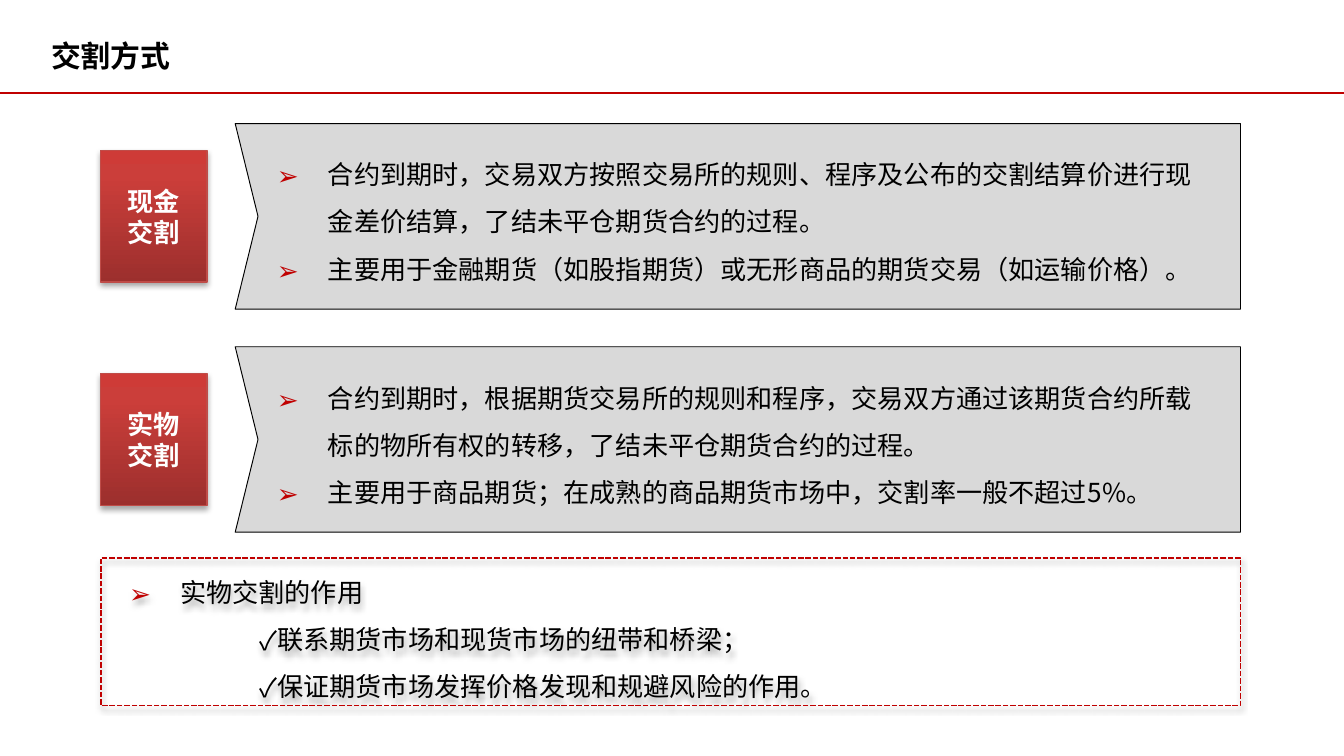
from copy import deepcopy
from dataclasses import dataclass

from lxml import etree
from pptx import Presentation
from pptx import util as u
from pptx.dml.color import RGBColor
from pptx.enum import dml, shapes, text
from pptx.oxml.ns import qn


@dataclass(frozen=True)
class Theme:
    font: str = "Noto Sans CJK SC"
    title_size: int = 16
    text_size: int = 14
    ink: str = "000000"
    paper: str = "FFFFFF"
    accent: str = "C00000"
    panel: str = "D9D9D9"
    label_line: str = "BF4C48"
    label_stops: tuple = ((0, "9C2F2D"), (0.8, "CB3E3A"), (1, "CE3B37"))


THEME = Theme()
WIDTH = 10
HEIGHT = WIDTH * 9 / 16
LEFT, RIGHT = 0.75, 9.23
RULE_TOP = 0.69
PANEL_LEFT, PANEL_TOP, PANEL_HEIGHT, PANEL_PITCH = 1.75, 0.92, 1.38, 1.66
NOTCH = 0.17
LABEL_WIDTH, LABEL_HEIGHT = 0.79, 0.98

# Bullet styles: character, colour, left margin, first-line indent
PANEL_ITEM = ("➢", THEME.accent, 0.38, -0.38)
ROLE_HEADING = ("➢", THEME.accent, 0.59, -0.38)
ROLE_ITEM = ("✓", THEME.ink, 0.79, 0.39)

DELIVERY_METHODS = [
    (("现金", "交割"), [
        "合约到期时，交易双方按照交易所的规则、程序及公布的交割结算价进行现金差价结算，了结未平仓期货合约的过程。",
        "主要用于金融期货（如股指期货）或无形商品的期货交易（如运输价格）。",
    ]),
    (("实物", "交割"), [
        "合约到期时，根据期货交易所的规则和程序，交易双方通过该期货合约所载标的物所有权的转移，了结未平仓期货合约的过程。",
        "主要用于商品期货；在成熟的商品期货市场中，交割率一般不超过5%。",
    ]),
]
ROLES = [
    ("实物交割的作用", ROLE_HEADING),
    ("联系期货市场和现货市场的纽带和桥梁；", ROLE_ITEM),
    ("保证期货市场发挥价格发现和规避风险的作用。", ROLE_ITEM),
]


def rgb(color):
    return RGBColor.from_string(color)


def add_node(parent, tag, **attributes):
    node = etree.SubElement(parent, qn(tag))
    for name, value in attributes.items():
        node.set(name, str(value))
    return node


def set_font(paragraph, size, color, bold=False):
    font = paragraph.font
    font.name, font.size, font.bold = THEME.font, u.Pt(size), bold
    font.color.rgb = rgb(color)
    defaults = paragraph._p.pPr.find(qn("a:defRPr"))
    east_asian = etree.Element(qn("a:ea"), typeface=THEME.font)
    defaults.find(qn("a:latin")).addnext(east_asian)


def set_bullet(paragraph, style):
    character, color, margin, indent = style
    properties = paragraph._p.get_or_add_pPr()
    properties.set("marL", str(u.Inches(margin)))
    properties.set("indent", str(u.Inches(indent)))
    add_node(add_node(properties, "a:buClr"), "a:srgbClr", val=color)
    add_node(properties, "a:buFont", typeface=THEME.font)
    add_node(properties, "a:buChar", char=character)


def paragraphs_for(frame, lines):
    """Yield one paragraph per line, starting with the frame's own."""
    for index, line in enumerate(lines):
        paragraph = frame.add_paragraph() if index else frame.paragraphs[0]
        paragraph.text = line
        yield paragraph


def fill_list(shape, items, insets):
    """Write (line, bullet style) items; insets run left, top, right, bottom."""
    frame = shape.text_frame
    frame.word_wrap = True
    frame.vertical_anchor = text.MSO_ANCHOR.MIDDLE
    (frame.margin_left, frame.margin_top,
     frame.margin_right, frame.margin_bottom) = map(u.Inches, insets)
    lines, styles = zip(*items)
    for paragraph, style in zip(paragraphs_for(frame, lines), styles):
        set_bullet(paragraph, style)
        paragraph.alignment = text.PP_ALIGN.LEFT
        paragraph.line_spacing = 1.5
        set_font(paragraph, THEME.text_size, THEME.ink)


def set_line(shape, color, width):
    shape.line.color.rgb = rgb(color)
    shape.line.width = u.Pt(width)


def set_soft_shadow(shape):
    shape.shadow.inherit = False
    effects = shape._element.spPr.find(qn("a:effectLst"))
    shadow = add_node(effects, "a:outerShdw", blurRad=u.Pt(3.1),
                      dist=u.Pt(1.8), dir=90 * 60000, rotWithShape=0)
    color = add_node(shadow, "a:srgbClr", val=THEME.ink)
    add_node(color, "a:alpha", val=35000)


def add_rectangle(slide, left, top, width, height):
    shape = slide.shapes.add_shape(
        shapes.MSO_SHAPE.RECTANGLE, *map(u.Inches, (left, top, width, height)))
    set_soft_shadow(shape)
    return shape


def add_title(slide, wording):
    title = slide.shapes.title
    title.left, title.top, title.width, title.height = map(
        u.Inches, (0.28, 0.14, 9.37, 0.55))
    frame = title.text_frame
    frame.text = wording
    frame.auto_size = text.MSO_AUTO_SIZE.NONE
    frame.vertical_anchor = text.MSO_ANCHOR.MIDDLE
    frame.paragraphs[0].alignment = text.PP_ALIGN.LEFT
    set_font(frame.paragraphs[0], THEME.title_size, THEME.ink, bold=True)


def add_title_rule(slide):
    rule = slide.shapes.add_connector(
        shapes.MSO_CONNECTOR.STRAIGHT,
        *map(u.Inches, (0, RULE_TOP, WIDTH, RULE_TOP)))
    set_line(rule, THEME.accent, 1)
    add_node(rule._element.spPr, "a:effectLst")


def add_label(slide, middle, lines):
    label = add_rectangle(slide, LEFT, middle - LABEL_HEIGHT / 2,
                          LABEL_WIDTH, LABEL_HEIGHT)
    label.fill.gradient()
    label.fill.gradient_angle = 90
    stop_list = label._element.spPr.find(".//" + qn("a:gsLst"))
    stop_list.append(deepcopy(stop_list[-1]))
    for stop, (position, color) in zip(label.fill.gradient_stops,
                                       THEME.label_stops):
        stop.position = position
        stop.color.rgb = rgb(color)
    set_line(label, THEME.label_line, 0.75)
    frame = label.text_frame
    frame.word_wrap = True
    frame.vertical_anchor = text.MSO_ANCHOR.MIDDLE
    for paragraph in paragraphs_for(frame, lines):
        paragraph.alignment = text.PP_ALIGN.CENTER
        set_font(paragraph, THEME.text_size, THEME.paper, bold=True)


def add_notched_panel(slide, top, lines):
    bottom = top + PANEL_HEIGHT
    corners = [(RIGHT, top), (PANEL_LEFT, top),
               (PANEL_LEFT + NOTCH, (top + bottom) / 2),
               (PANEL_LEFT, bottom), (RIGHT, bottom)]
    start, *others = [(u.Inches(x), u.Inches(y)) for x, y in corners]
    builder = slide.shapes.build_freeform(*start)
    builder.add_line_segments(others, close=True)
    panel = builder.convert_to_shape()
    panel.shadow.inherit = False
    panel.fill.solid()
    panel.fill.fore_color.rgb = rgb(THEME.panel)
    set_line(panel, THEME.ink, 0.5)
    fill_list(panel, [(line, PANEL_ITEM) for line in lines],
              (0.31, 0.08, 0.31, 0.12))


def add_roles_box(slide):
    box = add_rectangle(slide, LEFT, 4.15, RIGHT - LEFT, 1.1)
    box.fill.background()
    set_line(box, THEME.accent, 1)
    box.line.dash_style = dml.MSO_LINE.SQUARE_DOT
    fill_list(box, ROLES, (0, 0, 0, 0))


def main():
    presentation = Presentation()
    presentation.slide_width = u.Inches(WIDTH)
    presentation.slide_height = u.Inches(HEIGHT)
    slide = presentation.slides.add_slide(presentation.slide_layouts[5])
    add_title_rule(slide)
    add_title(slide, "交割方式")
    for row, (label, lines) in enumerate(DELIVERY_METHODS):
        top = PANEL_TOP + row * PANEL_PITCH
        add_label(slide, top + PANEL_HEIGHT / 2, label)
        add_notched_panel(slide, top, lines)
    add_roles_box(slide)
    presentation.save("out.pptx")


if __name__ == "__main__":
    main()
